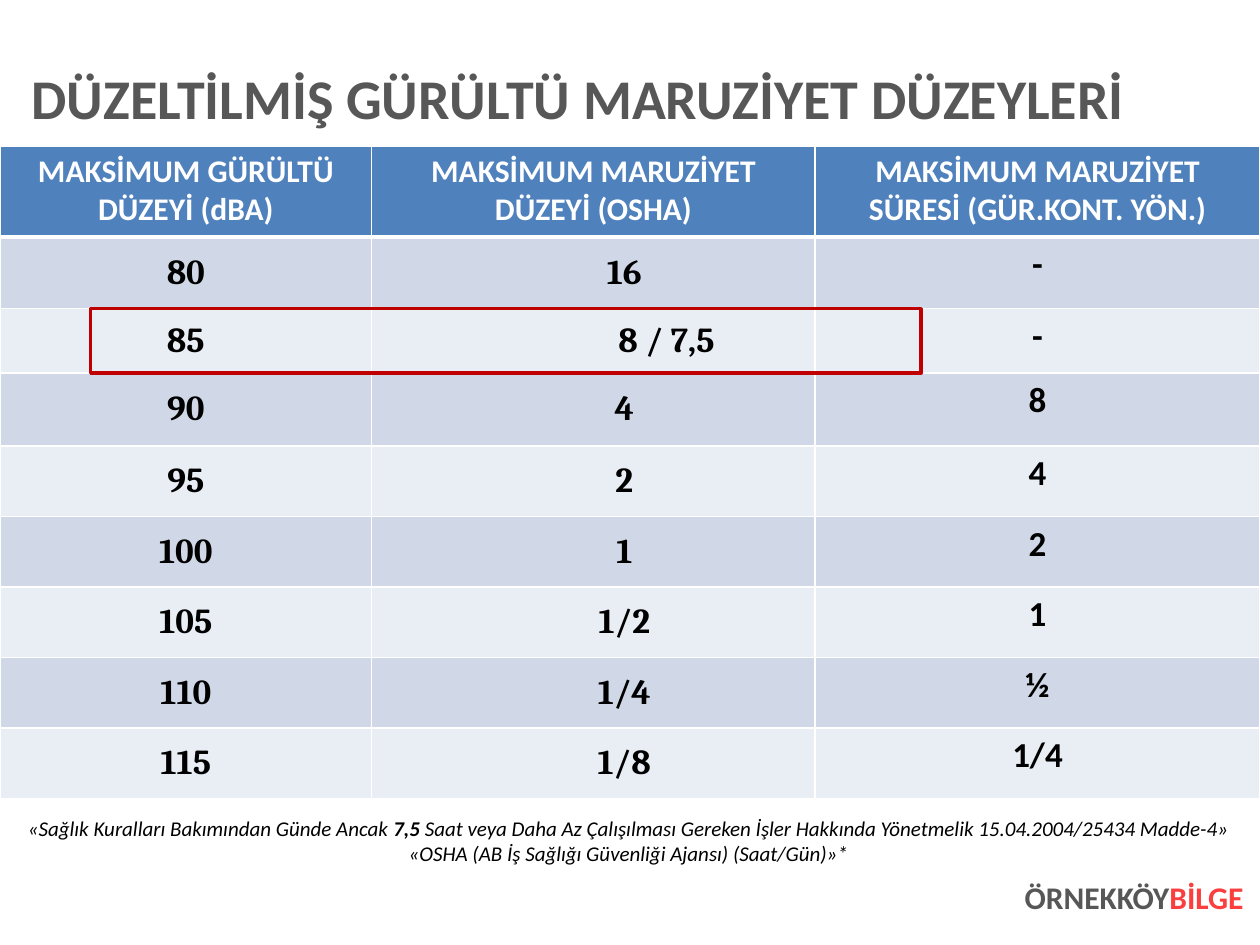
from lxml.etree import SubElement
from pptx import Presentation
from pptx.dml.color import RGBColor
from pptx.enum.shapes import MSO_SHAPE as Shape
from pptx.enum.text import MSO_ANCHOR as Anchor, PP_ALIGN as Align
from pptx.oxml.ns import qn
from pptx.util import Inches, Pt

GRAY = RGBColor(0x57, 0x57, 0x57)
RED = RGBColor(0xFB, 0x3E, 0x3E)
DARK_RED = RGBColor(0xC0, 0x00, 0x00)
BLACK = RGBColor(0x00, 0x00, 0x00)
WHITE = RGBColor(0xFF, 0xFF, 0xFF)
HEADER_BLUE = RGBColor(0x4F, 0x81, 0xBD)
BANDS = [RGBColor(0xD0, 0xD8, 0xE8), RGBColor(0xE9, 0xED, 0xF4)]

COLUMN_WIDTHS = [2.95, 3.52, 3.53]
ROW_HEIGHTS = [0.72, 0.57, 0.51, 0.58] + [0.56] * 5
HEADERS = [
    "MAKSİMUM GÜRÜLTÜ DÜZEYİ (dBA)",
    "MAKSİMUM MARUZİYET DÜZEYİ (OSHA)",
    "MAKSİMUM MARUZİYET SÜRESİ (GÜR.KONT. YÖN.)",
]
LEVELS = [
    ("80", "16", "-"),
    ("85", "8 / 7,5", "-"),
    ("90", "4", "8"),
    ("95", "2", "4"),
    ("100", "1", "2"),
    ("105", "1/2", "1"),
    ("110", "1/4", "½"),
    ("115", "1/8", "1/4"),
]
INDENT = 0.49
WIDE_INDENT = 1.16


def style(font, size, color, name="Calibri", bold=False, italic=False):
    font.name, font.size, font.bold, font.italic = name, Pt(size), bold, italic
    font.color.rgb = color


def add_text_frame(slide, box, margins):
    text_frame = slide.shapes.add_textbox(*map(Inches, box)).text_frame
    text_frame.word_wrap = True
    set_margins(text_frame, *margins)
    return text_frame


def set_margins(target, horizontal, vertical):
    target.margin_left = target.margin_right = Inches(horizontal)
    target.margin_top = target.margin_bottom = Inches(vertical)


def add_runs(paragraph, texts):
    for text in texts:
        run = paragraph.add_run()
        run.text = text
        yield run


def add_brand(slide, box):
    paragraph = add_text_frame(slide, box, (0, 0)).paragraphs[0]
    paragraph.alignment = Align.RIGHT
    for run, color in zip(add_runs(paragraph, ["ÖRNEKKÖY", "BİLGE"]), [GRAY, RED]):
        style(run.font, 18, color, bold=True)


def add_title(slide, box):
    text_frame = add_text_frame(slide, box, (0, 0.05))
    text_frame.vertical_anchor = Anchor.MIDDLE
    text_frame.text = "DÜZELTİLMİŞ GÜRÜLTÜ MARUZİYET DÜZEYLERİ"
    paragraph = text_frame.paragraphs[0]
    paragraph.line_spacing = 0.9
    style(paragraph.runs[0].font, 32, GRAY, bold=True)


def set_borders(cell, widths):
    properties = cell._tc.get_or_add_tcPr()
    for side, width in zip("LRTB", widths):
        line = SubElement(properties, qn(f"a:ln{side}"), w=str(Pt(width)))
        fill = SubElement(line, qn("a:solidFill"))
        SubElement(fill, qn("a:srgbClr"), val=str(WHITE))


def fill_cell(cell, text, fill, size, color, name="Calibri"):
    cell.fill.solid()
    cell.fill.fore_color.rgb = fill
    cell.text = text
    paragraph = cell.text_frame.paragraphs[0]
    paragraph.alignment = Align.CENTER
    style(paragraph.runs[0].font, size, color, name, bold=True)
    return paragraph


def add_levels_table(slide, box):
    shape = slide.shapes.add_table(len(ROW_HEIGHTS), len(COLUMN_WIDTHS), *map(Inches, box))
    table = shape.table
    for column, width in zip(table.columns, COLUMN_WIDTHS):
        column.width = Inches(width)
    for row, height in zip(table.rows, ROW_HEIGHTS):
        row.height = Inches(height)

    for index, header in enumerate(HEADERS):
        cell = table.cell(0, index)
        set_borders(cell, (1, 1, 1, 3))
        fill_cell(cell, header, HEADER_BLUE, 18, WHITE)

    for row_index, values in enumerate(LEVELS, start=1):
        for index, value in enumerate(values):
            cell = table.cell(row_index, index)
            set_borders(cell, (1, 1, 3 if row_index == 1 else 1, 1))
            name = "Calibri" if index == 2 else "Cambria"
            band = BANDS[(row_index - 1) % 2]
            paragraph = fill_cell(cell, value, band, 20, BLACK, name)
            if index < 2:
                cell.vertical_anchor = Anchor.MIDDLE
                set_margins(cell, 0.07, 0)
            if index == 1:
                indent = WIDE_INDENT if value == "8 / 7,5" else INDENT
                paragraph._p.get_or_add_pPr().set("indent", str(Inches(indent)))


def add_sources(slide, box):
    text_frame = add_text_frame(slide, box, (0.1, 0.05))
    lines = [
        [
            "«Sağlık Kuralları Bakımından Günde Ancak ",
            "7,5",
            " Saat veya Daha Az Çalışılması Gereken İşler Hakkında Yönetmelik 15.04.2004/25434 Madde-4»",
        ],
        ["«OSHA (AB İş Sağlığı Güvenliği Ajansı) (Saat/Gün)»*"],
    ]
    for paragraph, texts in zip([text_frame.paragraphs[0], text_frame.add_paragraph()], lines):
        paragraph.alignment = Align.CENTER
        for run in add_runs(paragraph, texts):
            style(run.font, 12, BLACK, bold=run.text == "7,5", italic=True)


def add_highlight(slide, box):
    shape = slide.shapes.add_shape(Shape.RECTANGLE, *map(Inches, box))
    shape.shadow.inherit = False
    shape.fill.background()
    shape.line.color.rgb = DARK_RED
    shape.line.width = Pt(2)


def main():
    presentation = Presentation()
    presentation.slide_width, presentation.slide_height = Inches(10), Inches(7.5)
    slide = presentation.slides.add_slide(presentation.slide_layouts[6])
    add_brand(slide, (7.56, 6.97, 2.31, 0.56))
    add_title(slide, (0.25, 0.45, 9.64, 0.71))
    add_levels_table(slide, (0, 1.16, 10, 5.18))
    add_sources(slide, (0.12, 6.42, 9.74, 0.5))
    add_highlight(slide, (0.72, 2.45, 6.59, 0.51))
    presentation.save("out.pptx")


if __name__ == "__main__":
    main()
